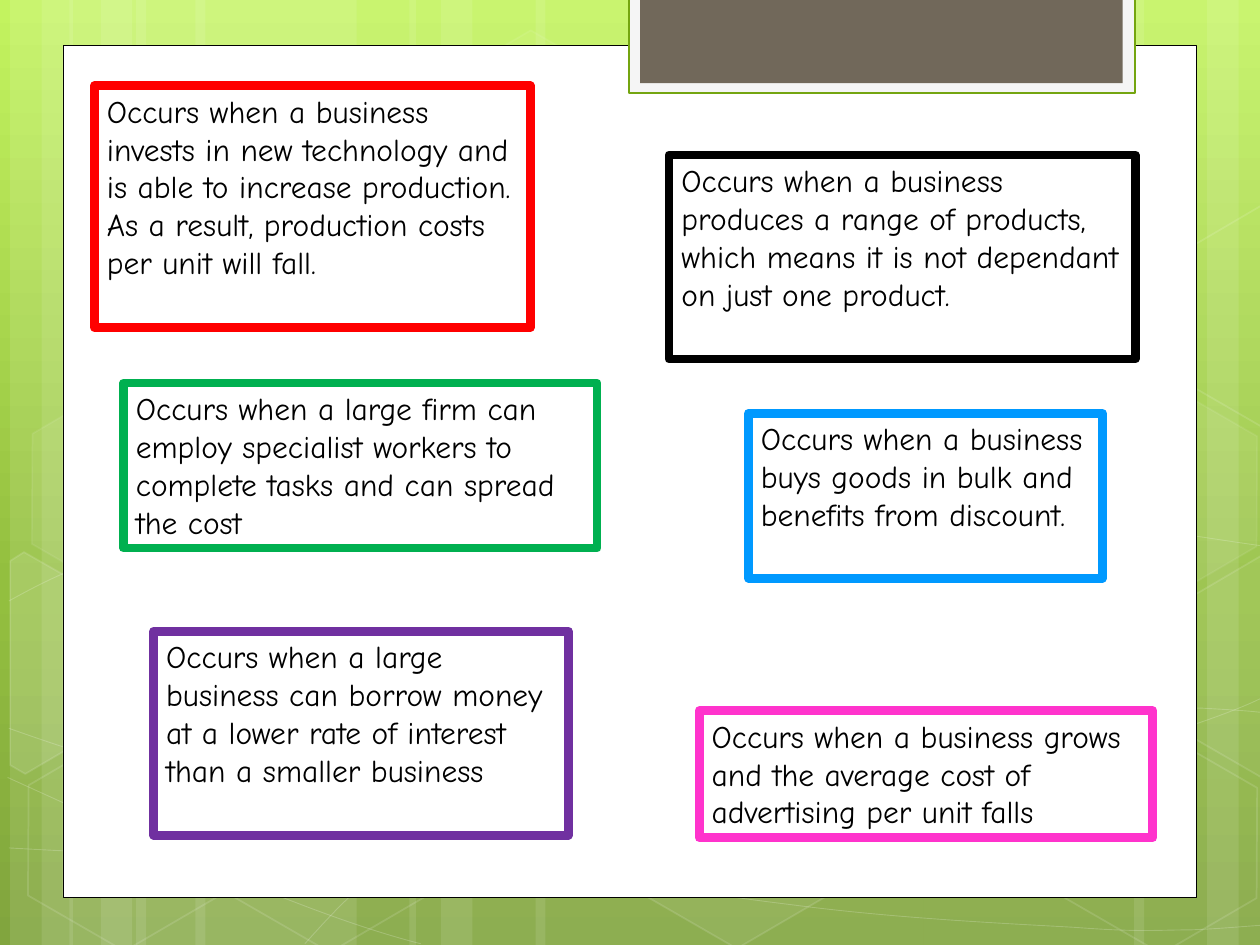
from copy import deepcopy
from math import cos, radians, sin
from lxml.etree import SubElement
from pptx import Presentation
from pptx.dml.color import RGBColor
from pptx.enum.shapes import MSO_SHAPE
from pptx.enum.text import MSO_ANCHOR, PP_ALIGN
from pptx.oxml.ns import qn
from pptx.util import Cm, Pt

WHITE = RGBColor(0xFF, 0xFF, 0xFF)
BLACK = RGBColor(0x00, 0x00, 0x00)
RED = RGBColor(0xFF, 0x00, 0x00)
BLUE = RGBColor(0x00, 0x99, 0xFF)
PINK = RGBColor(0xFF, 0x33, 0xCC)
PURPLE = RGBColor(0x70, 0x30, 0xA0)
GREEN = RGBColor(0x00, 0xB0, 0x50)
OLIVE = RGBColor(0x74, 0xA5, 0x10)
TAUPE = RGBColor(0x71, 0x68, 0x5A)
PALE = RGBColor(0xF5, 0xF5, 0xF5)
SKY = [(0, RGBColor(0xC3, 0xF3, 0x5F)), (0.62, RGBColor(0x93, 0xBF, 0x3F)),
       (1, RGBColor(0x81, 0xA5, 0x3E))]
FONT = "Comic Neue"
WIDTH, HEIGHT = 10, 7.5
TILT = 30

DEFINITIONS = [
    ("Occurs when a business invests in new technology and is able to increase production. "
     "As a result, production costs per unit will fall.", RED, (0.75, 0.68, 3.46, 1.92)),
    ("Occurs when a business buys goods in bulk and benefits from discount.",
     BLUE, (5.94, 3.28, 2.81, 1.31)),
    ("Occurs when a business grows and the average cost of advertising per unit falls",
     PINK, (5.55, 5.64, 3.6, 1.01)),
    ("Occurs when a large business can borrow money at a lower rate of interest "
     "than a smaller business", PURPLE, (1.22, 5.01, 3.29, 1.62)),
    ("Occurs when a large firm can employ specialist workers to complete tasks "
     "and can spread the cost", GREEN, (0.98, 3.04, 3.76, 1.31)),
    ("Occurs when a business produces a range of products, which means it is not "
     "dependant on just one product.", BLACK, (5.31, 1.23, 3.7, 1.62)),
]

STRIPES = [(1.08, 1.75, 0), (0.08, 0.5, 0), (0.33, 0.83, 0), (1.55, 1.75, 0),
           (0.55, 0.5, 0), (0.8, 0.83, 0), (7.33, 1.75, 180), (9.58, 0.5, 180),
           (9, 0.83, 180), (4.25, 3.08, 0), (3.25, 0.5, 0), (3.5, 0.83, 0)]

WAVES = [
    [(0.07, 6.73), (0.61, 6.76), (1.15, 6.79), (1.9, 6.78), (2.65, 6.77), (3.58, 6.75),
     (4.58, 6.65), (5.58, 6.55), (7, 6.36), (7.92, 6.17), (8.83, 5.98), (9.77, 5.68),
     (10.07, 5.51)],
    [(0.07, 4.77), (0.36, 4.61), (0.65, 4.46), (1.21, 4.31), (1.78, 4.16), (2.59, 3.94),
     (3.47, 3.87), (4.36, 3.8), (5.44, 3.79), (6.54, 3.87), (7.64, 3.95), (9.47, 4.26),
     (10.07, 4.34)],
    [(0.06, 6.17), (1.27, 6.72), (2.47, 7.27), (3.34, 7.49)],
    [(0.07, 5.78), (0.38, 5.89), (0.7, 6), (1.28, 6.16), (1.86, 6.31), (2.73, 6.56),
     (3.57, 6.73), (4.4, 6.9), (5.45, 7.08), (6.28, 7.18), (7.11, 7.29), (8, 7.33),
     (8.53, 7.36), (9.05, 7.4), (9.19, 7.38), (9.45, 7.38), (9.71, 7.37), (9.89, 7.35),
     (10.07, 7.34)],
    [(2.42, 7.49), (2.6, 7.29), (2.78, 7.09), (3.02, 6.91), (3.26, 6.73), (3.6, 6.53),
     (3.88, 6.39), (4.16, 6.25), (4.33, 6.19), (4.7, 6.09), (5.06, 5.99), (5.73, 5.85),
     (6.08, 5.78), (6.44, 5.71), (6.49, 5.71), (6.8, 5.69), (7.11, 5.66), (7.6, 5.63),
     (7.94, 5.62), (8.29, 5.61), (8.86, 5.62), (8.86, 5.62), (9.08, 5.62), (9.31, 5.62),
     (9.53, 5.62), (9.71, 5.63), (9.88, 5.64), (9.97, 5.65), (10.06, 5.66), (10.03, 5.65),
     (10.06, 5.66)],
]

HEXAGONS = [(3.34, 0.36, 4, 8), (4.97, 5.89, 6, 12), (0.11, 5.91, 0, 12), (0.14, 3.12, 7, 8),
            (1.74, 5.92, 0, 12), (7.53, 4.53, 10, 12), (8.34, 5.93, 0, 12), (8.34, 3.14, 7, 8)]

CUT_HEXAGONS = [
    ((0.36, 5.35), 10, [(0.08, 4.45), (0.19, 4.38), (0.96, 4.82), (0.95, 5.7),
                        (0.2, 6.14), (0.08, 6.07)]),
    ((9.85, 5.2), 4, [(9.26, 4.85), (10.01, 4.41), (10.09, 4.46), (10.09, 6.13),
                      (10.02, 6.17), (9.26, 5.73)]),
    ((9.85, 2.41), 0, [(9.26, 2.07), (10.01, 1.63), (10.1, 1.68), (10.09, 3.35),
                       (10.02, 3.39), (9.26, 2.95)]),
]


def length(inches):
    return Cm(inches * 2.54)


def set_opacity(paint, percent):
    if percent < 100:
        color = next(paint.iter(qn("a:srgbClr")))
        SubElement(color, qn("a:alpha")).set("val", str(percent * 1000))


def style(shape, fill=None, opacity=100, line=None, weight=1, line_opacity=100):
    shape.shadow.inherit = False
    properties = shape.element.spPr
    if fill is None or opacity == 0:
        shape.fill.background()
    else:
        shape.fill.solid()
        shape.fill.fore_color.rgb = fill
        set_opacity(properties.find(qn("a:solidFill")), opacity)
    if line is None:
        shape.line.fill.background()
    else:
        shape.line.color.rgb = line
        shape.line.width = Pt(weight)
        set_opacity(properties.find(qn("a:ln")), line_opacity)


def add_panel(shapes, place, kind=MSO_SHAPE.RECTANGLE, rotation=0, **look):
    panel = shapes.add_shape(kind, *map(length, place))
    panel.rotation = rotation
    style(panel, **look)
    return panel


def add_outline(shapes, points, close, **look):
    corners = [(length(x), length(y)) for x, y in points]
    builder = shapes.build_freeform(*corners[0])
    builder.add_line_segments(corners[1:], close=close)
    outline = builder.convert_to_shape()
    style(outline, **look)
    return outline


def bend(outline):
    segments = list(outline.element.iter(qn("a:lnTo")))
    for start in range(0, len(segments), 3):
        first, *others = segments[start:start + 3]
        first.tag = qn("a:cubicBezTo")
        for other in others:
            first.append(other[0])
            other.getparent().remove(other)


def turn_back(points, center):
    c, s = cos(radians(TILT)), sin(radians(TILT))
    cx, cy = center
    return [(cx + (x - cx) * c + (y - cy) * s, cy - (x - cx) * s + (y - cy) * c)
            for x, y in points]


def add_text(shapes, text, place, border, size=18, font=FONT, color=BLACK):
    box = shapes.add_textbox(*map(length, place))
    box.line.color.rgb = border
    box.line.width = Pt(5)
    frame = box.text_frame
    frame.word_wrap = True
    frame.vertical_anchor = MSO_ANCHOR.TOP
    paragraph = frame.paragraphs[0]
    paragraph.alignment = PP_ALIGN.LEFT
    run = paragraph.add_run()
    run.text = text
    run.font.size = Pt(size)
    run.font.name = font
    run.font.color.rgb = color


def paint_background(slide):
    fill = slide.background.fill
    fill.gradient()
    fill.gradient_angle = 270
    stops = next(slide.element.iter(qn("a:gsLst")))
    stops.insert(1, deepcopy(stops[0]))
    for stop, (position, color) in zip(fill.gradient_stops, SKY):
        stop.position = position
        stop.color.rgb = color


def main():
    deck = Presentation()
    deck.slide_width, deck.slide_height = length(WIDTH), length(HEIGHT)
    slide = deck.slides.add_slide(deck.slide_layouts[6])
    paint_background(slide)

    backdrop = slide.shapes.add_group_shape().shapes
    for left, width, rotation in STRIPES:
        add_panel(backdrop, (left, 0, width, HEIGHT), rotation=rotation, fill=WHITE, opacity=10)
    for knots in WAVES:
        bend(add_outline(backdrop, knots, False, line=WHITE, weight=0.5, line_opacity=20))
    for left, top, opacity, line_opacity in HEXAGONS:
        hexagon = add_panel(backdrop, (left, top, 1.75, 1.52), MSO_SHAPE.HEXAGON, TILT,
                            fill=WHITE, opacity=opacity, line=WHITE, line_opacity=line_opacity)
        hexagon.adjustments[0] = 0.285
    for center, opacity, corners in CUT_HEXAGONS:
        add_outline(backdrop, turn_back(corners, center), True, fill=WHITE, opacity=opacity,
                    line=WHITE, line_opacity=12).rotation = TILT

    add_panel(slide.shapes, (0.5, 0.36, 9, 6.76), fill=WHITE, line=BLACK, weight=0.5)
    add_panel(slide.shapes, (4.99, -0.02, 4.02, 0.76), fill=PALE, line=OLIVE, weight=1.25)
    add_panel(slide.shapes, (5.08, -0.02, 3.83, 0.68), fill=TAUPE)
    for text, border, place in DEFINITIONS:
        add_text(slide.shapes, text, place, border)
    deck.save("out.pptx")


if __name__ == "__main__":
    main()
